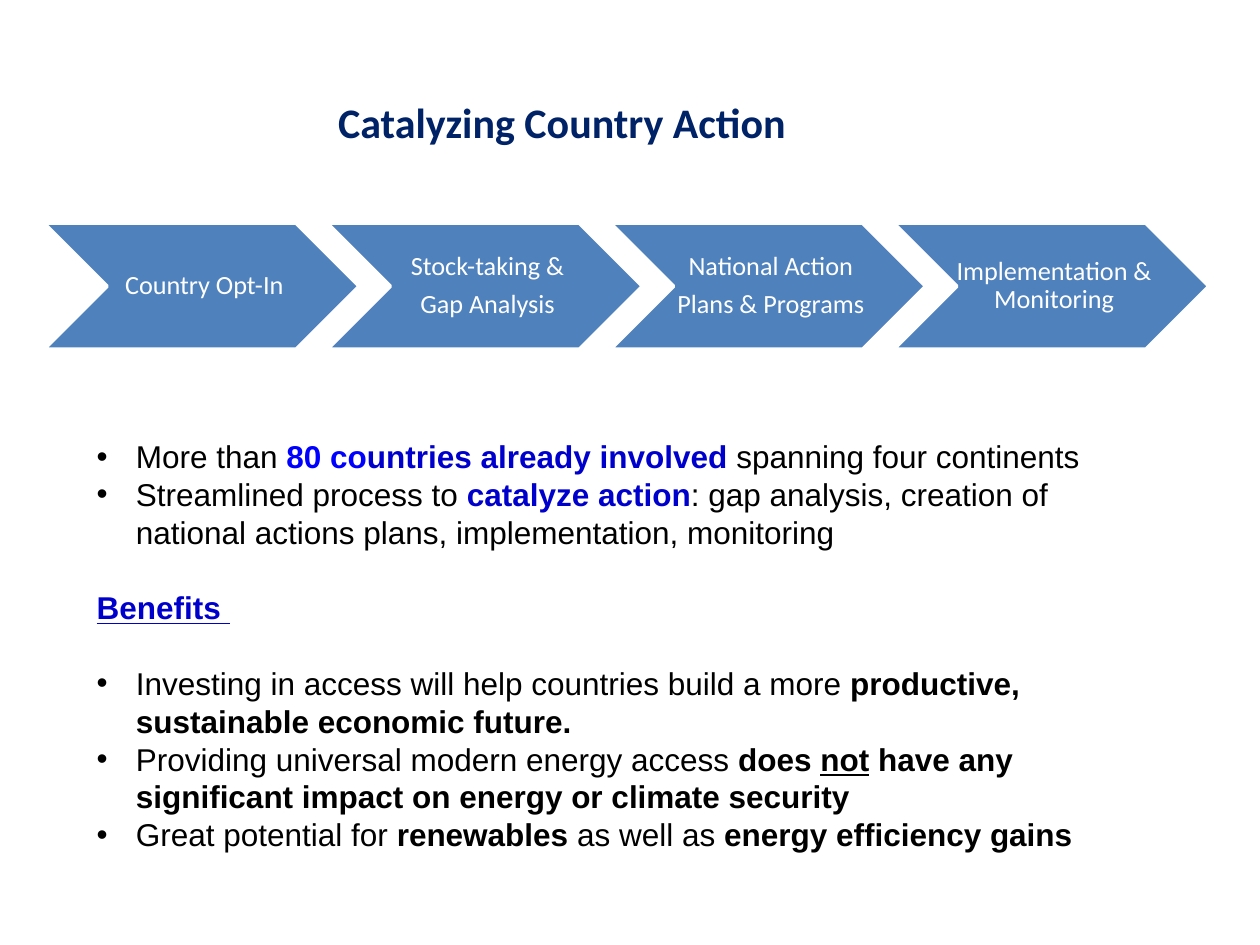
from lxml.etree import SubElement
from pptx import Presentation
from pptx.dml.color import RGBColor
from pptx.enum.shapes import MSO_SHAPE
from pptx.enum.text import MSO_ANCHOR, PP_ALIGN
from pptx.oxml.ns import qn
from pptx.util import Cm, Pt

NAVY = RGBColor(0x00, 0x22, 0x66)
STEEL = RGBColor(0x4F, 0x81, 0xBD)
WHITE = RGBColor(0xFF, 0xFF, 0xFF)
BLACK = RGBColor(0x00, 0x00, 0x00)
BRIGHT = RGBColor(0x00, 0x00, 0xFF)
BLUE = RGBColor(0x00, 0x00, 0xCC)

TITLE = "Catalyzing Country Action"
STEPS = [
    ["Country Opt-In"],
    ["Stock-taking &", "Gap Analysis"],
    ["National Action", "Plans & Programs"],
    ["Implementation &\vMonitoring"],
]
PLAIN = (BLACK, False, False)
BOLD = (BLACK, True, False)
UNDER = (BLACK, True, True)
KEY = (BLUE, True, False)
HEAD = (BLUE, True, True)
LINE = 21.6
POINTS = [
    (True, 0, [("More than ", PLAIN), ("80 co", (BRIGHT, True, False)),
               ("untries already involved ", KEY),
               ("spanning four continents", PLAIN)]),
    (True, 0, [("Streamlined process to ", PLAIN), ("catalyze action", KEY),
               (": gap analysis, creation of national actions plans, "
                "implementation, monitoring", PLAIN)]),
    (False, LINE, [("Benefits ", HEAD)]),
    (True, LINE, [("Investing in access will help countries build a more ", PLAIN),
                  ("productive, sustainable economic future.", BOLD)]),
    (True, 0, [("Providing universal modern energy access ", PLAIN),
               ("does ", BOLD), ("not", UNDER),
               (" have any significant impact on energy or climate security", BOLD)]),
    (True, 0, [("Great potential for ", PLAIN), ("renewables", BOLD),
               (" as well as ", PLAIN), ("energy efficiency gains", BOLD)]),
]


def add_run(para, text, face, size, color, bold=False, under=False):
    run = para.add_run()
    run.text = text
    font = run.font
    font.name, font.size, font.bold = face, Pt(size), bold
    font.underline = under
    font.color.rgb = color


def next_para(frame, index):
    return frame.add_paragraph() if index else frame.paragraphs[0]


def set_inset(frame, left, rest):
    frame.margin_left = Cm(left)
    frame.margin_top = frame.margin_right = frame.margin_bottom = Cm(rest)


def add_title(slide):
    box = slide.shapes.add_textbox(Cm(0.85), Cm(1.69), Cm(20.96), Cm(1.27))
    frame = box.text_frame
    frame.word_wrap = True
    frame.vertical_anchor = MSO_ANCHOR.BOTTOM
    set_inset(frame, 0, 0)
    para = frame.paragraphs[0]
    para.alignment = PP_ALIGN.CENTER
    add_run(para, TITLE, "Calibri", 24, NAVY, True)


def add_step(slide, index, lines):
    left = Cm(0.89 + index * 5.71)
    shape = slide.shapes.add_shape(MSO_SHAPE.CHEVRON, left, Cm(4.5), Cm(6.35), Cm(2.54))
    shape.shadow.inherit = False
    shape.fill.solid()
    shape.fill.fore_color.rgb = STEEL
    shape.line.color.rgb = WHITE
    shape.line.width = Pt(2)
    frame = shape.text_frame
    frame.word_wrap = False
    frame.vertical_anchor = MSO_ANCHOR.MIDDLE
    set_inset(frame, 0.16, 0.05)
    for row, line in enumerate(lines):
        para = next_para(frame, row)
        para.alignment = PP_ALIGN.CENTER
        para.line_spacing = 0.9
        para.space_after = Pt(5.25)
        for part, text in enumerate(line.split("\v")):
            if part:
                para.add_line_break()
            add_run(para, text, "Calibri", 15, WHITE)


def add_points(slide):
    box = slide.shapes.add_textbox(Cm(1.7), Cm(8.69), Cm(20.96), Cm(8.71))
    frame = box.text_frame
    frame.word_wrap = True
    for row, (bullet, gap, runs) in enumerate(POINTS):
        para = next_para(frame, row)
        props = para._p.get_or_add_pPr()
        props.set("marL", str(Cm(0.79)))
        props.set("indent", str(-Cm(0.79)))
        if bullet:
            SubElement(props, qn("a:buFont")).set("typeface", "Arial")
            SubElement(props, qn("a:buChar")).set("char", "•")
        if gap:
            para.space_before = Pt(gap)
        for text, style in runs:
            add_run(para, text, "Arial", 18, *style)


def main():
    deck = Presentation()
    deck.slide_width, deck.slide_height = Cm(25.4), Cm(19.05)
    slide = deck.slides.add_slide(deck.slide_layouts[6])
    add_title(slide)
    for index, lines in enumerate(STEPS):
        add_step(slide, index, lines)
    add_points(slide)
    deck.save("out.pptx")


if __name__ == "__main__":
    main()
